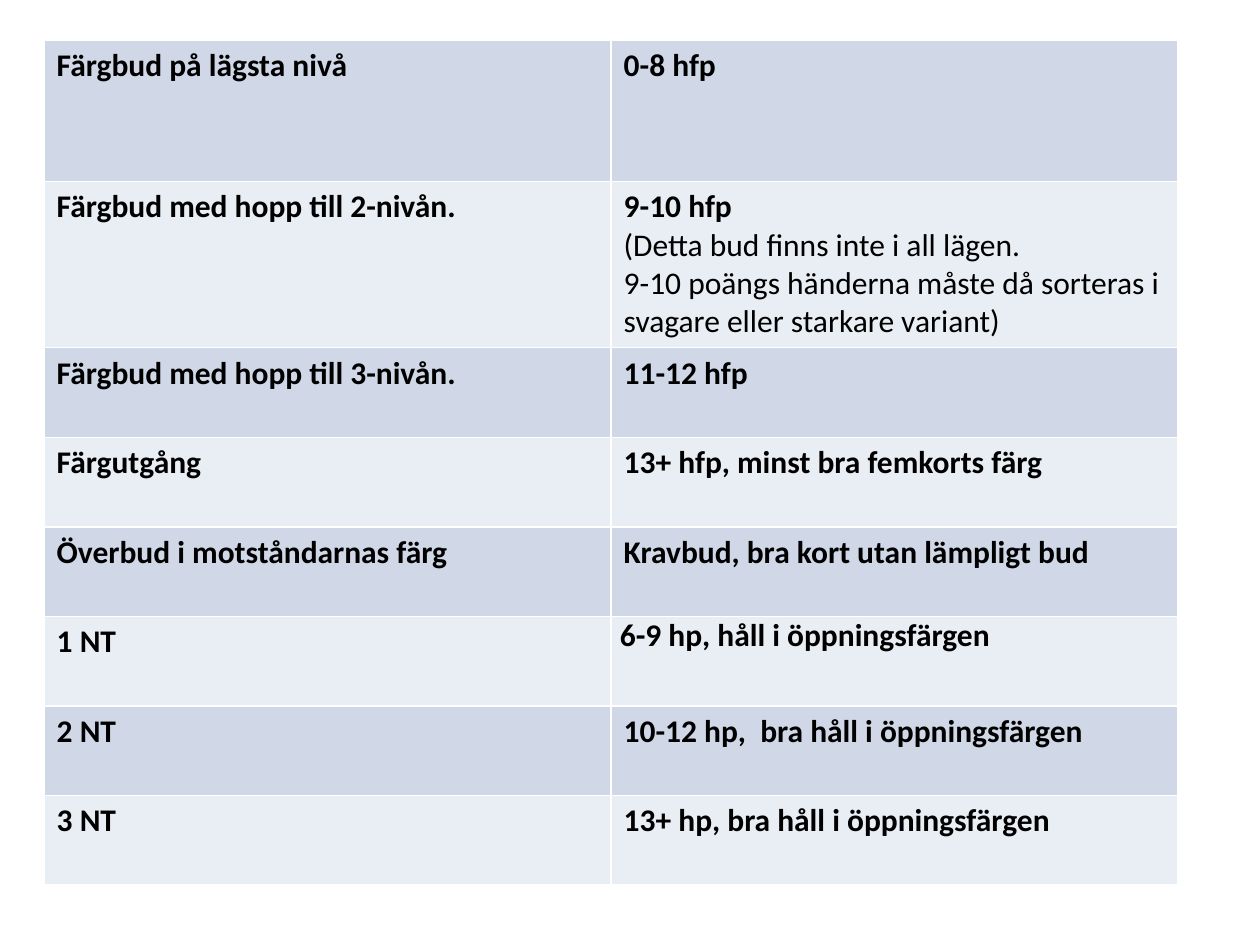
from typing import NamedTuple

from lxml.etree import SubElement
from pptx import Presentation
from pptx.dml.color import RGBColor
from pptx.oxml.ns import qn
from pptx.util import Pt

BLACK = RGBColor(0x00, 0x00, 0x00)
WHITE = RGBColor(0xFF, 0xFF, 0xFF)
BANDS = (RGBColor(0xD0, 0xD8, 0xE8), RGBColor(0xE9, 0xED, 0xF4))
FONT, SIZE = "Calibri", Pt(18)
COL_W = Pt(324)


class Bid(NamedTuple):
    name: str
    meaning: str
    notes: tuple[str, ...] = ()
    height: float = 51.2
    tight: bool = False  # meaning cell with narrow margins


BIDS = [
    Bid("Färgbud på lägsta nivå", "0-8 hfp", height=80.6),
    Bid("Färgbud med hopp till 2-nivån.", "9-10 hfp",
        ("(Detta bud finns inte i all lägen.",
         "9-10 poängs händerna måste då sorteras i svagare eller starkare variant)"),
        height=94.8),
    Bid("Färgbud med hopp till 3-nivån.", "11-12 hfp"),
    Bid("Färgutgång", "13+ hfp, minst bra femkorts färg"),
    Bid("Överbud i motståndarnas färg", "Kravbud, bra kort utan lämpligt bud"),
    Bid("1 NT", "6-9 hp, håll i öppningsfärgen", tight=True),
    Bid("2 NT", "10-12 hp,  bra håll i öppningsfärgen"),
    Bid("3 NT", "13+ hp, bra håll i öppningsfärgen"),
]


def set_borders(cell, color: RGBColor, width: int) -> None:
    """Put a solid line on all four sides, ahead of the cell fill."""
    tc_pr = cell._tc.get_or_add_tcPr()
    for i, side in enumerate(("lnL", "lnR", "lnT", "lnB")):
        ln = SubElement(tc_pr, qn(f"a:{side}"), w=str(width))
        fill = SubElement(ln, qn("a:solidFill"))
        SubElement(fill, qn("a:srgbClr"), val=str(color))
        tc_pr.insert(i, ln)


def fill_cell(cell, heading: str, notes: tuple[str, ...], band: RGBColor) -> None:
    """Write a bold heading and plain notes on a coloured band."""
    cell.fill.solid()
    cell.fill.fore_color.rgb = band
    set_borders(cell, WHITE, Pt(1))
    tf = cell.text_frame
    for i, text in enumerate((heading, *notes)):
        p = tf.add_paragraph() if i else tf.paragraphs[0]
        r = p.add_run()
        r.text = text
        r.font.name, r.font.size, r.font.bold = FONT, SIZE, i == 0
        r.font.color.rgb = BLACK


def add_bid_table(s, bids: list[Bid]) -> None:
    height = Pt(sum(b.height for b in bids))
    table = s.shapes.add_table(len(bids), 2, Pt(25.2), Pt(23), 2 * COL_W, height).table
    table.first_row = False
    for col in table.columns:
        col.width = COL_W
    for i, bid in enumerate(bids):
        table.rows[i].height = Pt(bid.height)
        band = BANDS[i % 2]
        name, meaning = table.rows[i].cells
        fill_cell(name, bid.name, (), band)
        fill_cell(meaning, bid.meaning, bid.notes, band)
        if bid.tight:
            meaning.margin_left = meaning.margin_right = Pt(5)
            meaning.margin_top = meaning.margin_bottom = Pt(0)


def main() -> None:
    prs = Presentation()
    prs.slide_width, prs.slide_height = Pt(720), Pt(540)
    s = prs.slides.add_slide(prs.slide_layouts[6])

    # Table of bids and their meanings
    add_bid_table(s, BIDS)

    prs.save("out.pptx")


if __name__ == "__main__":
    main()
